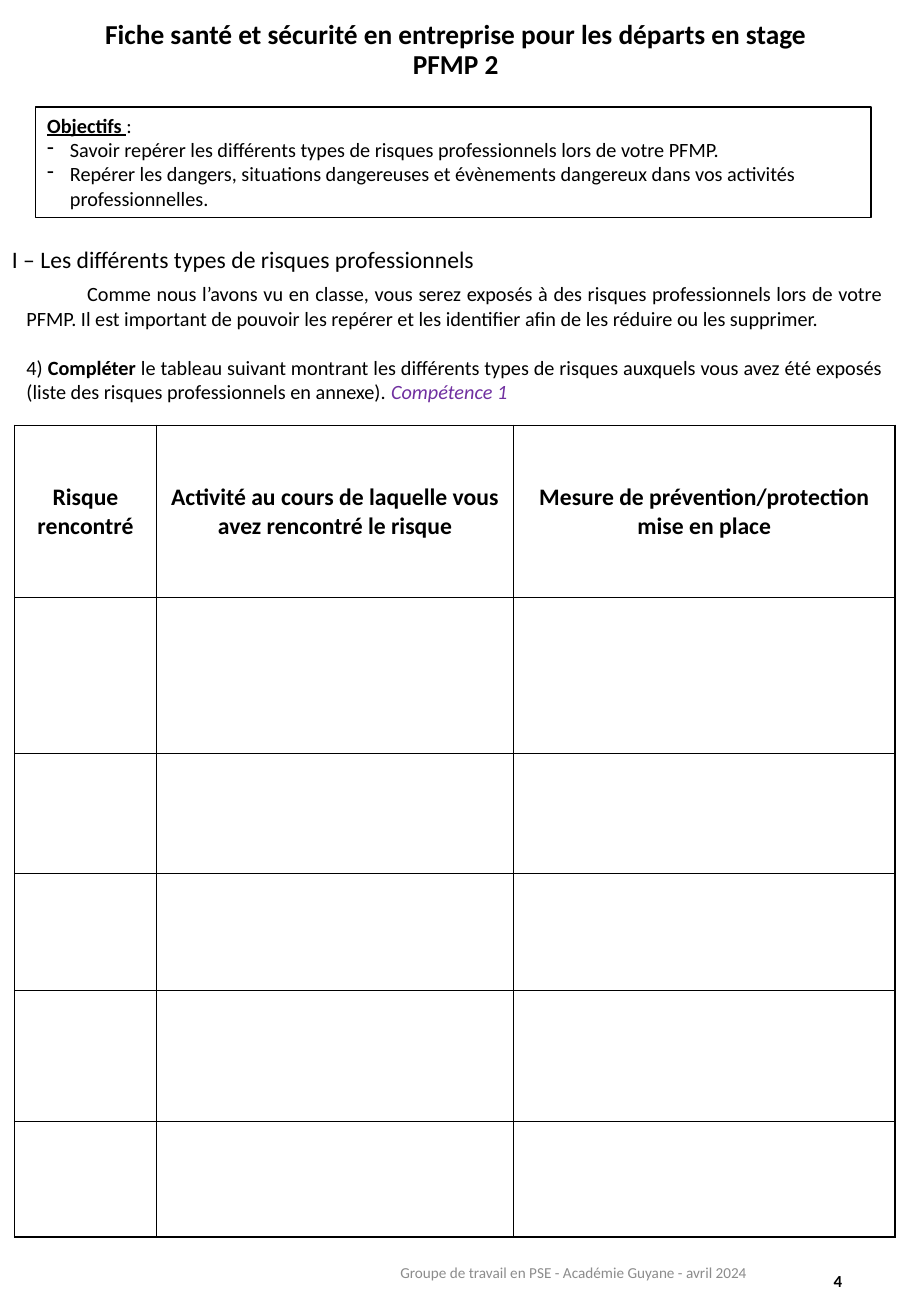
from dataclasses import dataclass, field

from lxml import etree
from pptx import Presentation
from pptx import slide as sld
from pptx import table as tbl
from pptx import util as u
from pptx.dml import color
from pptx.enum import shapes, text
from pptx.oxml import ns
from pptx.text import text as txt

ALIGN = text.PP_ALIGN
ANCHOR = text.MSO_ANCHOR
GROW = text.MSO_AUTO_SIZE.SHAPE_TO_FIT_TEXT


@dataclass(frozen=True)
class Theme:
    font: str = "Calibri"
    ink: str = "000000"
    paper: str = "FFFFFF"
    skill: str = "7030A0"
    muted: str = "8C8C8C"
    title: float = 16.2
    heading: float = 14
    body: float = 12
    number: float = 10
    footer: float = 9
    frame: float = 0.75
    grid: float = 1


THEME = Theme()


@dataclass
class Run:
    words: str
    ink: str = THEME.ink
    style: dict[str, bool] = field(default_factory=dict)


@dataclass
class Para:
    runs: list[Run]
    size: float = THEME.body
    layout: dict[str, object] = field(default_factory=dict)
    left: float = 0
    indent: float = 0
    bullet: str = ""


@dataclass
class Block:
    left: float
    top: float
    width: float
    height: float
    paras: list[Para]
    frame: dict[str, object] = field(default_factory=dict)
    outlined: bool = False


BOLD = {"bold": True}
CENTRE = {"alignment": ALIGN.CENTER}
JUSTIFY = {"alignment": ALIGN.JUSTIFY}


def objective(words: str) -> Para:
    return Para([Run(words)], left=13.5, indent=-13.5, bullet="-")


BLOCKS = [
    Block(52.6, 10.8, 434.9, 40.3, [
        Para([Run("Fiche santé et sécurité en entreprise pour les départs en stage\nPFMP 2",
                  style=BOLD)], THEME.title, {**CENTRE, "line_spacing": 0.9}),
    ], {"vertical_anchor": ANCHOR.BOTTOM}),
    Block(20.9, 63.4, 495.4, 65.5, [
        Para([Run("Objectifs ", style={"bold": True, "underline": True}), Run(":")]),
        objective("Savoir repérer les différents types de risques professionnels "
                  "lors de votre PFMP."),
        objective("Repérer les dangers, situations dangereuses et évènements dangereux "
                  "dans vos activités professionnelles."),
    ], {"auto_size": GROW}, outlined=True),
    Block(384.5, 738, 121.7, 41.8, [
        Para([Run("4", style=BOLD)], THEME.number, {"alignment": ALIGN.RIGHT}),
    ], {"vertical_anchor": ANCHOR.MIDDLE}),
    Block(0, 141.8, 291.6, 24.5, [
        Para([Run("I – Les différents types de risques professionnels")], THEME.heading),
    ], {"word_wrap": False, "auto_size": GROW}),
    Block(8.6, 163.4, 522, 79.9, [
        Para([Run("Comme nous l’avons vu en classe, vous serez exposés à des risques "
                  "professionnels lors de votre PFMP. Il est important de pouvoir les repérer "
                  "et les identifier afin de les réduire ou les supprimer.")],
             layout=JUSTIFY, indent=36),
        Para([Run("4) "), Run("Compléter ", style=BOLD),
              Run("le tableau suivant montrant les différents types de risques auxquels vous "
                  "avez été exposés (liste des risques professionnels en annexe). "),
              Run("Compétence 1", THEME.skill, {"italic": True})],
             layout={**JUSTIFY, "space_before": u.Pt(14.6)}),
    ], {"auto_size": GROW}),
    Block(213.1, 733, 253.4, 41.8, [
        Para([Run("Groupe de travail en PSE - Académie Guyane - avril 2024", THEME.muted)],
             THEME.footer, CENTRE),
    ], {"vertical_anchor": ANCHOR.MIDDLE}),
]

HEADERS = ["Risque rencontré", "Activité au cours de laquelle vous avez rencontré le risque",
           "Mesure de prévention/protection mise en place"]
COLUMNS = [84.2, 211.7, 226.1]
ROWS = [102.2, 92.2, 71.3, 69.1, 77.8, 68.4]


def apply(target: object, values: dict[str, object]) -> None:
    for name, value in values.items():
        setattr(target, name, value)


def rgb(code: str) -> color.RGBColor:
    return color.RGBColor.from_string(code)


def write_run(p: txt._Paragraph, words: str, run: Run, size: float) -> None:
    r = p.add_run()
    r.text = words
    apply(r.font, {"name": THEME.font, "size": u.Pt(size), "bold": False, **run.style})
    r.font.color.rgb = rgb(run.ink)


def write(tf: txt.TextFrame, paras: list[Para]) -> None:
    for i, para in enumerate(paras):
        p = tf.add_paragraph() if i else tf.paragraphs[0]
        apply(p, {"alignment": ALIGN.LEFT, **para.layout})
        pPr = p._p.get_or_add_pPr()
        pPr.set("marL", str(u.Pt(para.left)))
        pPr.set("indent", str(u.Pt(para.indent)))
        if para.bullet:
            etree.SubElement(pPr, ns.qn("a:buChar"), char=para.bullet)
        for run in para.runs:
            for j, line in enumerate(run.words.split("\n")):
                if j:
                    p.add_line_break()
                write_run(p, line, run, para.size)


def draw_block(s: sld.Slide, block: Block) -> None:
    box = [u.Pt(v) for v in (block.left, block.top, block.width, block.height)]
    if block.outlined:
        sp = s.shapes.add_shape(shapes.MSO_SHAPE.RECTANGLE, *box)
        sp.shadow.inherit = False
        sp.fill.background()
        sp.line.color.rgb = rgb(THEME.ink)
        sp.line.width = u.Pt(THEME.frame)
    else:
        sp = s.shapes.add_textbox(*box)
    tf = sp.text_frame
    apply(tf, {"word_wrap": True, "vertical_anchor": ANCHOR.TOP, **block.frame})
    write(tf, block.paras)


def style_cell(cell: tbl._Cell) -> None:
    tcPr = cell._tc.get_or_add_tcPr()
    for side in ("lnL", "lnR", "lnT", "lnB"):
        ln = etree.SubElement(tcPr, ns.qn(f"a:{side}"), w=str(u.Pt(THEME.grid)))
        fill = etree.SubElement(ln, ns.qn("a:solidFill"))
        etree.SubElement(fill, ns.qn("a:srgbClr"), val=THEME.ink)
    cell.fill.solid()
    cell.fill.fore_color.rgb = rgb(THEME.paper)
    cell.vertical_anchor = ANCHOR.MIDDLE


def draw_risk_table(s: sld.Slide) -> None:
    table = s.shapes.add_table(len(ROWS), len(COLUMNS), u.Pt(8.6), u.Pt(252),
                               u.Pt(sum(COLUMNS)), u.Pt(sum(ROWS))).table
    apply(table, {"first_row": False, "horz_banding": False})
    for column, width in zip(table.columns, COLUMNS):
        column.width = u.Pt(width)
    for row, height in zip(table.rows, ROWS):
        row.height = u.Pt(height)
    for cell in table.iter_cells():
        style_cell(cell)
    for cell, words in zip(table.rows[0].cells, HEADERS):
        write(cell.text_frame, [Para([Run(words, style=BOLD)], THEME.heading, CENTRE)])


def main() -> None:
    prs = Presentation()
    apply(prs, {"slide_width": u.Pt(540), "slide_height": u.Pt(779.76)})
    s = prs.slides.add_slide(prs.slide_layouts[6])
    for block in BLOCKS:
        draw_block(s, block)
    draw_risk_table(s)
    prs.save("out.pptx")


if __name__ == "__main__":
    main()
